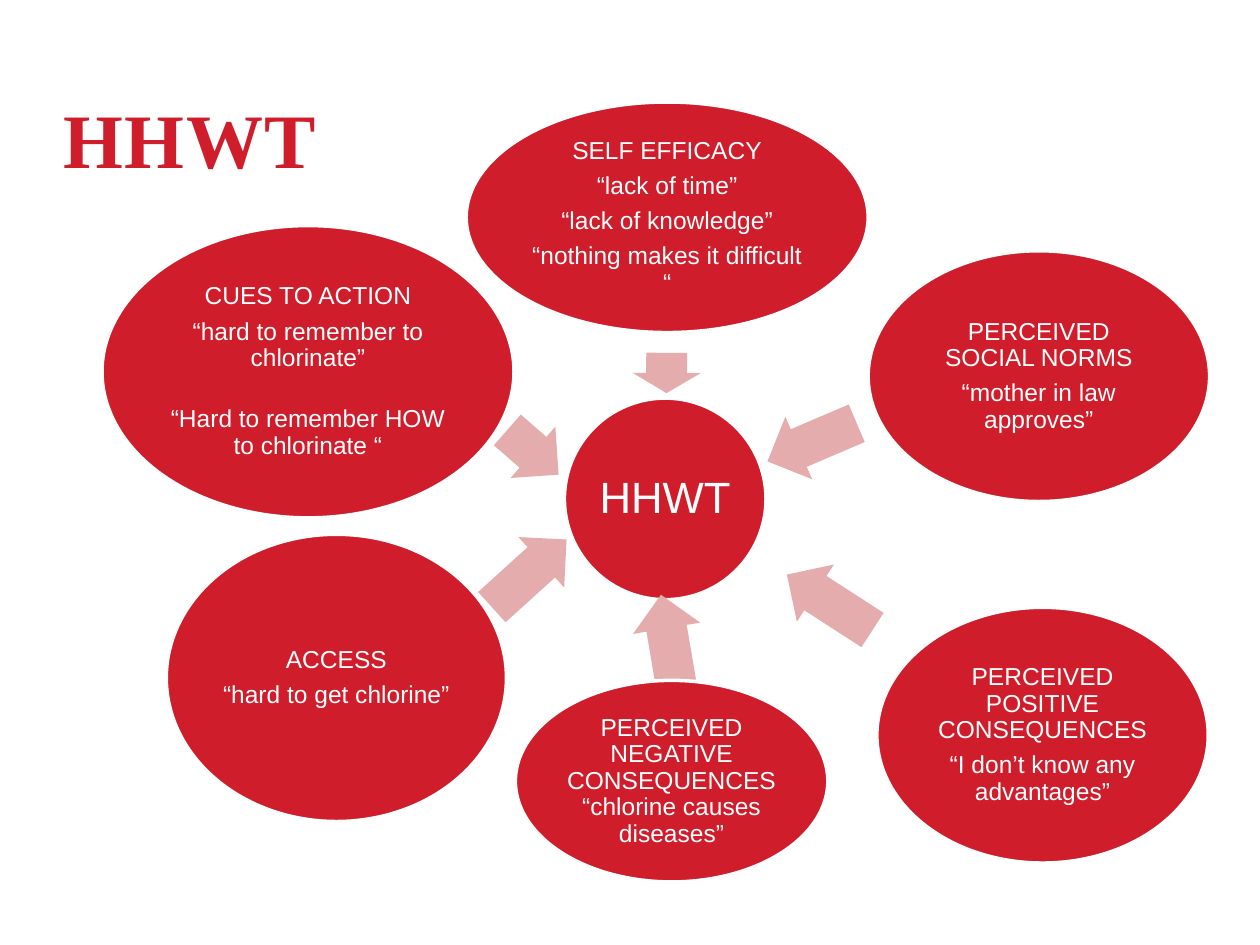
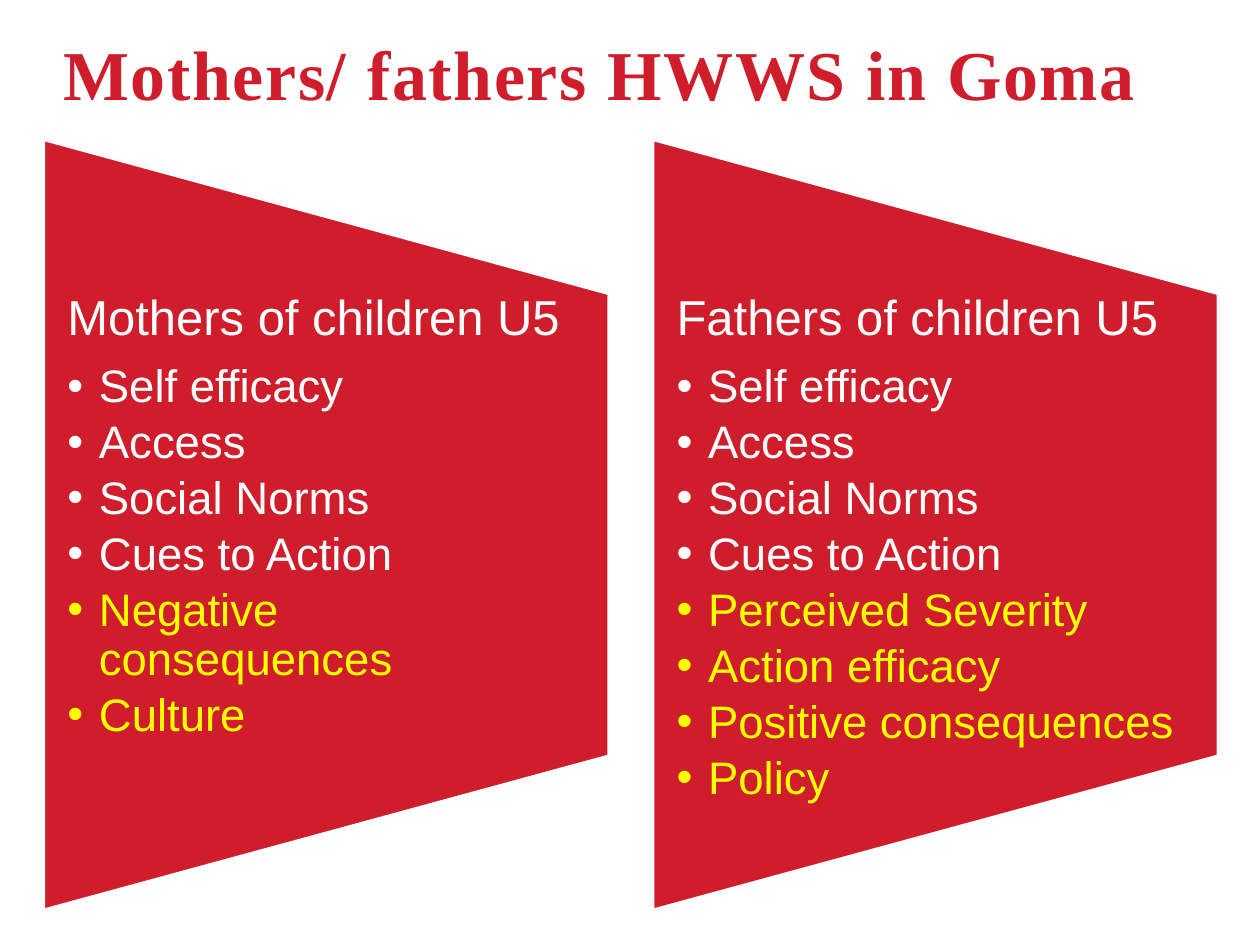
from dataclasses import dataclass
from lxml.etree import SubElement
from pptx import Presentation
from pptx.dml.color import RGBColor
from pptx.enum.shapes import MSO_SHAPE
from pptx.enum.text import MSO_ANCHOR, MSO_AUTO_SIZE, PP_ALIGN
from pptx.oxml.ns import qn
from pptx.util import Inches, Pt


@dataclass(frozen=True)
class Theme:
    red: RGBColor = RGBColor(0xD0, 0x1D, 0x2B)
    pink: RGBColor = RGBColor(0xE4, 0xAC, 0xAD)
    white: RGBColor = RGBColor(0xFF, 0xFF, 0xFF)
    yellow: RGBColor = RGBColor(0xFF, 0xFF, 0x00)
    title_font: str = "Times New Roman"
    body_font: str = "Arial"
    factor_title_size: int = 44
    group_title_size: int = 40
    hub_size: int = 25
    factor_size: int = 14
    heading_size: int = 28
    item_size: int = 26


THEME = Theme()
WIDTH, HEIGHT = Inches(10), Inches(7.5)
COLUMNS, ROWS = 100, 75
ARROW_BREADTH = 5.4

FACTORS = [
    ((37, 8.1, 31.9, 18.3), (51.3, 26.9, 3.2, 90.3),
     ["SELF EFFICACY", "“lack of time”", "“lack of knowledge”", "“nothing makes it difficult “"]),
    ((68.9, 19.9, 27.1, 19.9), (60.6, 32.4, 7.7, 156.9),
     ["PERCEIVED SOCIAL NORMS", "“mother in law approves”"]),
    ((69.6, 48.2, 26.3, 20.3), (61.8, 45.1, 8.1, 212.9),
     ["PERCEIVED POSITIVE CONSEQUENCES", "“I don’t know any advantages”"]),
    ((40.9, 54, 24.8, 16), (49.5, 48, 7.1, 260.4),
     ["PERCEIVED NEGATIVE CONSEQUENCES “chlorine causes diseases”"]),
    ((13.2, 42.4, 27, 22.8), (38, 42.8, 8, 317.8),
     ["ACCESS", "“hard to get chlorine”"]),
    ((8.1, 17.9, 32.7, 23.2), (39.6, 33.2, 5.4, 41.1),
     ["CUES TO ACTION", "“hard to remember to chlorinate”", "“Hard to remember HOW to chlorinate “"]),
]
SHARED_ITEMS = ["Self efficacy", "Access", "Social Norms", "Cues to Action"]
GROUPS = [
    ("Mothers of children U5", ["Negative consequences", "Culture"]),
    ("Fathers of children U5",
     ["Perceived Severity", "Action efficacy", "Positive consequences", "Policy"]),
]


def grid(left, top, width, height):
    return [int(WIDTH * left / COLUMNS), int(HEIGHT * top / ROWS),
            int(WIDTH * width / COLUMNS), int(HEIGHT * height / ROWS)]


def apply(target, formats):
    for name, value in formats.items():
        setattr(target, name, value)


def set_frame(frame, side, end, anchor):
    apply(frame, {"word_wrap": True, "auto_size": MSO_AUTO_SIZE.NONE, "vertical_anchor": anchor,
                  "margin_left": Inches(side), "margin_right": Inches(side),
                  "margin_top": Inches(end), "margin_bottom": Inches(end)})


def write(para, text, color, formats, spacing):
    apply(para, spacing)
    span = para.add_run()
    span.text = text
    apply(span.font, formats)
    span.font.color.rgb = color
    return span


def next_para(frame, index):
    return frame.add_paragraph() if index else frame.paragraphs[0]


def add_titled_page(deck, title, size, top):
    page = deck.slides.add_slide(deck.slide_layouts[5])
    box = page.shapes.title
    apply(box, dict(zip(("left", "top", "width", "height"), grid(5, top, 90, 11.6))))
    set_frame(box.text_frame, 0, 0, MSO_ANCHOR.TOP)
    span = write(box.text_frame.paragraphs[0], title, THEME.red,
                 {"name": THEME.title_font, "size": Pt(size), "bold": True},
                 {"alignment": PP_ALIGN.LEFT, "line_spacing": 0.8})
    span.font._element.set("spc", "100")
    return page


def add_filled(page, kind, place, color, outlined=True):
    shape = page.shapes.add_shape(kind, *grid(*place))
    shape.shadow.inherit = False
    shape.fill.solid()
    shape.fill.fore_color.rgb = color
    if outlined:
        shape.line.color.rgb = THEME.white
        shape.line.width = Pt(2)
    else:
        shape.line.fill.background()
    return shape


def add_ellipse(page, place, lines, size):
    frame = add_filled(page, MSO_SHAPE.OVAL, place, THEME.red).text_frame
    set_frame(frame, 0.02, 0.02, MSO_ANCHOR.MIDDLE)
    for index, line in enumerate(lines):
        write(next_para(frame, index), line, THEME.white,
              {"name": THEME.body_font, "size": Pt(size)},
              {"alignment": PP_ALIGN.CENTER, "line_spacing": 0.9, "space_after": Pt(size * 0.35)})
    return frame


def add_arrow(page, left, top, length, angle):
    arrow = add_filled(page, MSO_SHAPE.RIGHT_ARROW, (left, top, length, ARROW_BREADTH),
                       THEME.pink, outlined=False)
    arrow.rotation = angle
    arrow.adjustments[0], arrow.adjustments[1] = 0.6, 0.5


def add_bullet(para):
    properties = para._p.get_or_add_pPr()
    for name, value in {"marL": Inches(0.25), "indent": -Inches(0.25)}.items():
        properties.set(name, str(int(value)))
    SubElement(properties, qn("a:buFont")).set("typeface", THEME.body_font)
    SubElement(properties, qn("a:buChar")).set("char", "•")


def add_panel(page, left, heading, own_items):
    top, width, height = 11.05, 44.9, 61.2
    turned = (left + (width - height) / 2, top + (height - width) / 2, height, width)
    add_filled(page, MSO_SHAPE.FLOWCHART_MANUAL_OPERATION, turned, THEME.red).rotation = 270
    box = page.shapes.add_textbox(*grid(left, top + height / 5, width, height * 0.6))
    frame = box.text_frame
    set_frame(frame, 0.19, 0, MSO_ANCHOR.TOP)
    rows = [(text, THEME.white) for text in [heading, *SHARED_ITEMS]]
    rows += [(item, THEME.yellow) for item in own_items]
    for index, (text, color) in enumerate(rows):
        para = next_para(frame, index)
        size, gap = (THEME.item_size, 0.15) if index else (THEME.heading_size, 0.35)
        if index:
            add_bullet(para)
        write(para, text, color, {"name": THEME.body_font, "size": Pt(size)},
              {"alignment": PP_ALIGN.LEFT, "line_spacing": 0.9, "space_after": Pt(size * gap)})


def build_factor_page(deck):
    page = add_titled_page(deck, "HHWT", THEME.factor_title_size, 8.7)
    add_ellipse(page, (44.8, 31.6, 16, 16), ["HHWT"], THEME.hub_size)
    for place, arrow, lines in FACTORS:
        add_arrow(page, *arrow)
        frame = add_ellipse(page, place, lines, THEME.factor_size)
    frame.paragraphs[-1].space_before = Pt(15)


def build_group_page(deck):
    page = add_titled_page(deck, "Mothers/ fathers HWWS in Goma", THEME.group_title_size, 3.7)
    for index, (heading, own_items) in enumerate(GROUPS):
        add_panel(page, 3.45 + index * 48.35, heading, own_items)


def main():
    deck = Presentation()
    apply(deck, {"slide_width": WIDTH, "slide_height": HEIGHT})
    build_factor_page(deck)
    build_group_page(deck)
    deck.save("out.pptx")


if __name__ == "__main__":
    main()
